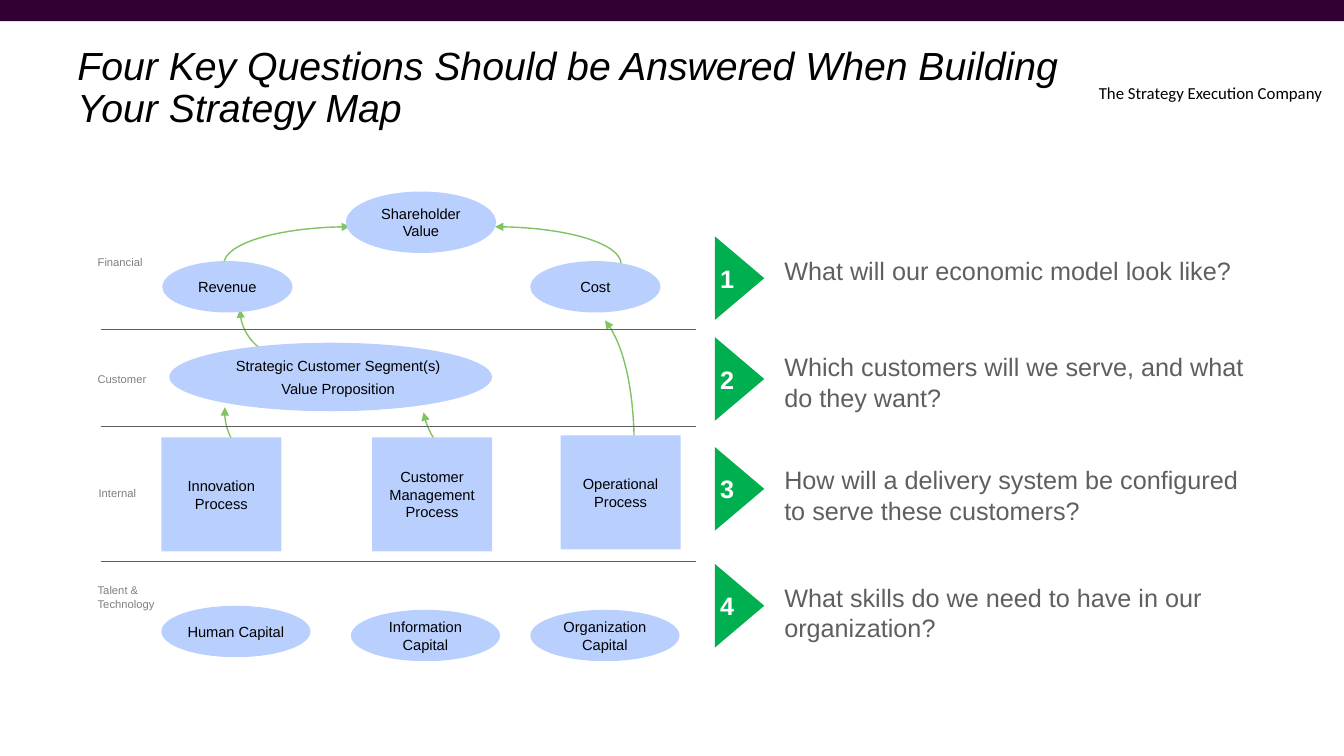
from lxml.etree import SubElement
from pptx import Presentation
from pptx.dml.color import RGBColor
from pptx.enum.shapes import MSO_CONNECTOR, MSO_SHAPE
from pptx.enum.text import MSO_ANCHOR, PP_ALIGN
from pptx.oxml.ns import qn
from pptx.util import Pt

# Content: boxes are (left, top, width, height) in px, 100 px to the inch
TITLE = "Four Key Questions Should be Answered When Building Your Strategy Map"
TAG = "The Strategy Execution Company"
LABELS = [
    ("Financial", 87, 248),
    ("Customer", 87, 364),
    ("Internal", 88, 478),
    ("Talent & Technology", 87, 574),
]
RULES = [327, 423, 557]
OVALS = [
    ("Shareholder Value", (343, 190, 149, 61)),
    ("Revenue", (161, 259, 129, 51)),
    ("Cost", (526, 259, 129, 51)),
    ("Human Capital", (160, 601, 148, 51)),
    ("Information Capital", (348, 605, 148, 51)),
    ("Organization Capital", (526, 605, 148, 51)),
]
SEGMENT = ["Strategic Customer Segment(s)", "Value Proposition"]
STEPS = [
    ("Innovation Process", (160, 434, 119, 113)),
    ("Customer Management Process", (369, 434, 119, 113)),
    ("Operational Process", (556, 432, 119, 113)),
]
# Each curve: start, two control points, end
CURVES = [
    [(629, 444), (629, 388), (617, 337), (600, 318)],
    [(461, 454), (441, 452), (425, 434), (420, 409)],
    [(260, 467), (235, 451), (221, 426), (223, 404)],
    [(299, 358), (265, 358), (238, 335), (238, 307)],
    [(222, 262), (222, 242), (278, 225), (347, 225)],
    [(616, 262), (616, 242), (560, 225), (491, 225)],
]
# Question, top of its text, middle of its marker
ASKS = [
    ("What will our economic model look like?", 248, 276),
    ("Which customers will we serve, and what do they want?", 344, 376),
    ("How will a delivery system be configured to serve these customers?",
     456, 485),
    ("What skills do we need to have in our organization?", 573, 601),
]

THEME = {
    "bar": "310032", "node": "B9D0FF", "arrow": "81C263", "mark": "00B050",
    "ink": "000000", "gray": "5F5F5F", "label": "7F7F7F", "white": "FFFFFF",
    "font": "Arial", "tag font": "Calibri",
    "title": 28, "ask": 18, "tag": 12, "small": 10.5, "tiny": 8,
}
PX = 9144

deck = Presentation()
deck.slide_width, deck.slide_height = 1333 * PX, 750 * PX
slide = deck.slides.add_slide(deck.slide_layouts[6])
shapes = slide.shapes


def color(name):
    return RGBColor.from_string(THEME[name])


def emu(box):
    return [n * PX for n in box]


def write(shape, text, size="small", ink="ink", font="font", bold=False,
          italic=False, align=PP_ALIGN.LEFT, anchor=MSO_ANCHOR.TOP,
          inset=(10, 5, 10, 5), lead=None, gap=0):
    frame = shape.text_frame
    frame.word_wrap = True
    frame.vertical_anchor = anchor
    (frame.margin_left, frame.margin_top,
     frame.margin_right, frame.margin_bottom) = emu(inset)
    lines = [text] if isinstance(text, str) else text
    for i, line in enumerate(lines):
        para = frame.paragraphs[0] if i == 0 else frame.add_paragraph()
        para.alignment = align
        if lead:
            para.line_spacing = lead
        if i:
            para.space_before = Pt(gap)
        run = para.add_run()
        run.text = line
        run.font.name = THEME[font]
        run.font.size = Pt(THEME[size])
        run.font.color.rgb = color(ink)
        run.font.bold = bold
        run.font.italic = italic


def note(text, box, **form):
    write(shapes.add_textbox(*emu(box)), text, **form)


def block(kind, box, fill):
    shape = shapes.add_shape(kind, *emu(box))
    shape.shadow.inherit = False
    shape.fill.solid()
    shape.fill.fore_color.rgb = color(fill)
    shape.line.fill.background()
    return shape


def node(kind, text, box, inset=(0, 0, 0, 0), gap=0):
    write(block(kind, box, "node"), text, align=PP_ALIGN.CENTER,
          anchor=MSO_ANCHOR.MIDDLE, inset=inset, gap=gap)


def curve(points):
    pen = shapes.build_freeform(*points[0], scale=PX)
    pen.add_line_segments(points[1:], close=False)
    shape = pen.convert_to_shape()
    shape.shadow.inherit = False
    shape.fill.background()
    shape.line.color.rgb = color("arrow")
    shape.line.width = Pt(1)
    # Join the three straight parts into one Bezier segment
    track = next(shape._element.iter(qn("a:path")))
    bend = SubElement(track, qn("a:cubicBezTo"))
    for part in track.findall(qn("a:lnTo")):
        bend.append(part[0])
        track.remove(part)
    SubElement(shape.line._get_or_add_ln(), qn("a:tailEnd"), type="triangle")


def rule(y):
    line = shapes.add_connector(MSO_CONNECTOR.STRAIGHT,
                                *emu((100, y, 690, y)))
    line.line.color.rgb = color("gray")
    line.line.width = Pt(0.5)
    SubElement(line._element.spPr, qn("a:effectLst"))


# Header
block(MSO_SHAPE.RECTANGLE, (0, 0, 1333, 21), "bar")
note(TAG, (1080, 77, 253, 30), size="tag", font="tag font")
note(TITLE, (67, 41, 995, 125), size="title", italic=True, lead=0.9)

# Strategy map
for points in CURVES:
    curve(points)
for y in RULES:
    rule(y)
for text, x, y in LABELS:
    note(text, (x, y, 95, 24), size="tiny", ink="label")
for text, box in STEPS:
    node(MSO_SHAPE.RECTANGLE, text, box)
for text, box in OVALS:
    node(MSO_SHAPE.OVAL, text, box)
node(MSO_SHAPE.OVAL, SEGMENT, (168, 340, 320, 68), inset=(15, 0, 0, 0), gap=4)

# Numbered questions: markers turn to point right, numbers stay upright
WIDE, HIGH = 83, 49
for num, (text, top, mid) in enumerate(ASKS, 1):
    mark = block(MSO_SHAPE.ISOSCELES_TRIANGLE,
                 (692, mid - WIDE // 2, WIDE, HIGH), "mark")
    mark.top = mid * PX - mark.height // 2
    mark.rotation = 90
    write(mark, str(num), size="ask", ink="white", bold=True,
          align=PP_ALIGN.CENTER, anchor=MSO_ANCHOR.MIDDLE, inset=(0, 0, 0, 0))
    mark.text_frame._txBody.bodyPr.set("vert", "vert270")
    note(text, (768, top, 478, 71), size="ask", ink="gray")

deck.save("out.pptx")
